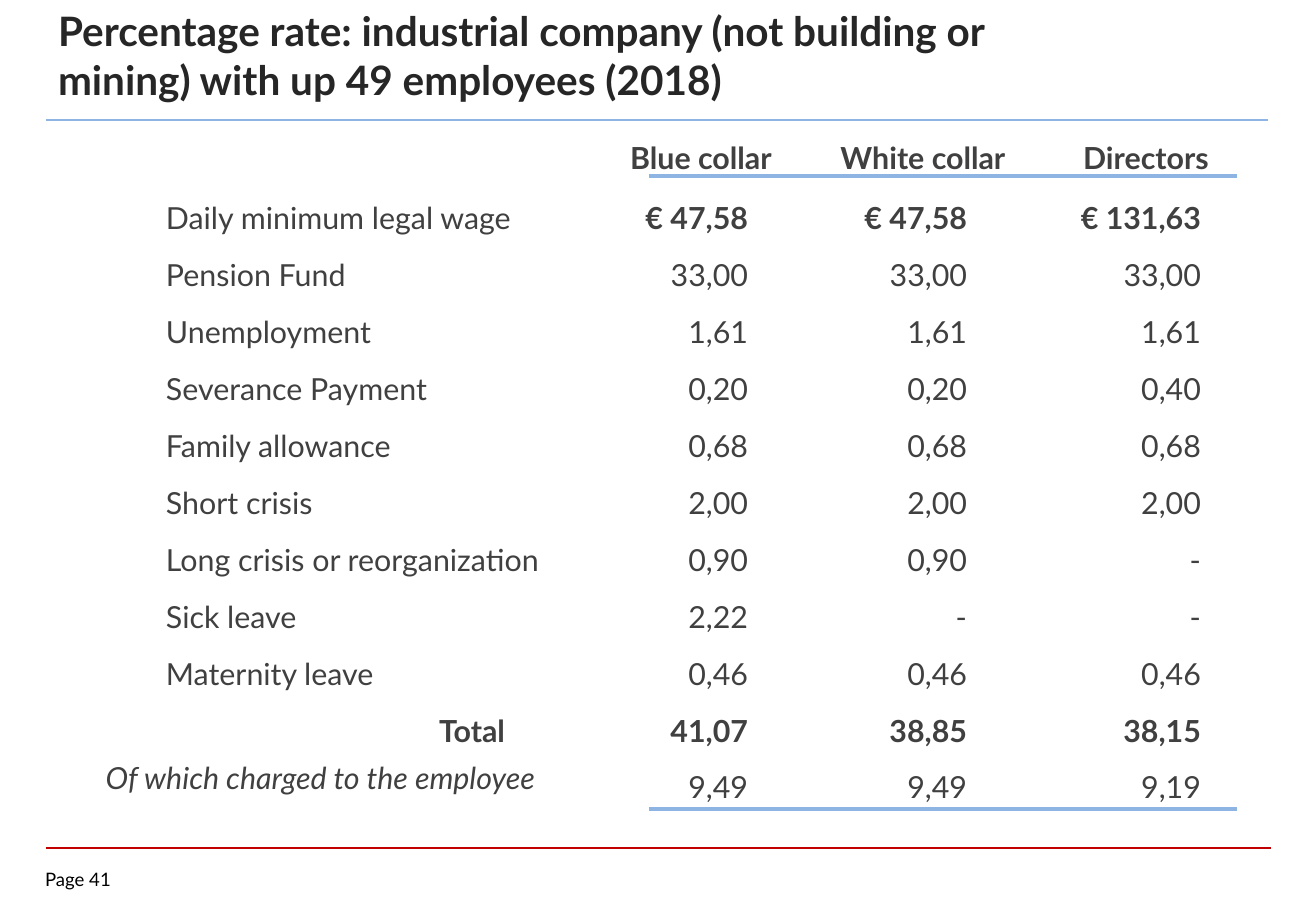
from lxml.etree import SubElement
from pptx import Presentation
from pptx.dml.color import RGBColor
from pptx.enum.shapes import MSO_CONNECTOR
from pptx.enum.text import MSO_ANCHOR, MSO_AUTO_SIZE, PP_ALIGN
from pptx.oxml.ns import qn
from pptx.util import Pt

EMU_PER_PX = 7526
FONT = "Lato"
COLORS = {"title": "262626", "text": "404040", "page": "000000",
          "rule": "8EB4E3", "footer_rule": "C00000"}

HEADINGS = ["", "Blue collar", "White collar", "Directors"]
RATES = [
    ["Daily minimum legal wage", "€ 47,58", "€ 47,58", "€ 131,63"],
    ["Pension Fund", "33,00", "33,00", "33,00"],
    ["Unemployment", "1,61", "1,61", "1,61"],
    ["Severance Payment", "0,20", "0,20", "0,40"],
    ["Family allowance", "0,68", "0,68", "0,68"],
    ["Short crisis", "2,00", "2,00", "2,00"],
    ["Long crisis or reorganization", "0,90", "0,90", "-"],
    ["Sick leave", "2,22", "-", "-"],
    ["Maternity leave", "0,46", "0,46", "0,46"],
    ["Total", "41,07", "38,85", "38,15"],
    ["Of which charged to the employee", "9,49", "9,49", "9,19"],
]
COLUMN_WIDTHS = [505, 192, 252, 194]
VALUE_INSETS = [0, 49, 82, 42]
LABEL_INDENT = 66
SUMMARY_INSETS = {"Total": 100, "Of which charged to the employee": 70}
HEADING_HEIGHT = 63
RATE_HEIGHT = 57


def px(length):
    return length * EMU_PER_PX


def add_text(paragraph, text, size, color, bold=False, italic=False):
    run = paragraph.add_run()
    run.text = text
    run.font.name = FONT
    run.font.size = Pt(size)
    run.font.bold = bold
    run.font.italic = italic
    run.font.color.rgb = RGBColor.from_string(COLORS[color])


def add_rule(slide, left, top, width, color, weight):
    rule = slide.shapes.add_connector(
        MSO_CONNECTOR.STRAIGHT, px(left), px(top), px(left + width), px(top))
    rule.line.color.rgb = RGBColor.from_string(COLORS[color])
    rule.line.width = Pt(weight)
    SubElement(rule._element.spPr, qn("a:effectLst"))


def set_margins(area, left=0, top=0, right=0, bottom=0):
    area.margin_left, area.margin_top = px(left), px(top)
    area.margin_right, area.margin_bottom = px(right), px(bottom)


def add_heading(slide, left, top, width, height):
    title = slide.shapes.title
    title.left, title.top = px(left), px(top)
    title.width, title.height = px(width), px(height)
    frame = title.text_frame
    frame.word_wrap = True
    frame.auto_size = MSO_AUTO_SIZE.NONE
    frame.vertical_anchor = MSO_ANCHOR.TOP
    set_margins(frame, left=12, right=12)
    paragraph = frame.paragraphs[0]
    paragraph.alignment = PP_ALIGN.LEFT
    paragraph.line_spacing = 1.0
    add_text(paragraph, "Percentage rate: industrial company (not building or "
             "mining) with up 49 employees (2018)", 24, "title", bold=True)
    add_rule(slide, left, top + 114, 1222, "rule", 1.5)


def fill_cell(cell, text, is_heading, column, label):
    cell.fill.background()
    cell.vertical_anchor = MSO_ANCHOR.MIDDLE
    set_margins(cell)
    is_label = column == 0
    is_charge = is_label and label.startswith("Of which")
    paragraph = cell.text_frame.paragraphs[0]
    if is_heading:
        paragraph.alignment = PP_ALIGN.CENTER
    elif is_label and label not in SUMMARY_INSETS:
        paragraph.alignment = PP_ALIGN.LEFT
        set_margins(cell, left=LABEL_INDENT)
    else:
        paragraph.alignment = PP_ALIGN.RIGHT
        inset = SUMMARY_INSETS[label] if is_label else VALUE_INSETS[column]
        set_margins(cell, right=inset, bottom=18 if is_charge else 0)
    bold = is_heading or label == "Total" or text.startswith("€")
    if text:
        add_text(paragraph, text, 18, "text", bold, is_charge)


def add_rates(slide, left, top, width, height):
    rows = [HEADINGS] + RATES
    rates = slide.shapes.add_table(
        len(rows), len(HEADINGS), px(left), px(top), px(width), px(height)).table
    rates.horz_banding = False
    for column, column_width in zip(rates.columns, COLUMN_WIDTHS):
        column.width = px(column_width)
    for row_index, entries in enumerate(rows):
        is_heading = row_index == 0
        rates.rows[row_index].height = px(HEADING_HEIGHT if is_heading else RATE_HEIGHT)
        for column_index, entry in enumerate(entries):
            fill_cell(rates.cell(row_index, column_index), entry,
                      is_heading, column_index, entries[0])
    for rule_top in (top + 50, top + height - 7):
        add_rule(slide, left + 549, rule_top, 588, "rule", 2.25)


def add_footer(slide, left, top, width, height):
    add_rule(slide, left, top, width, "footer_rule", 1)
    page = slide.shapes.add_textbox(px(left - 1), px(top + 20), px(89), px(height - 20))
    frame = page.text_frame
    frame.word_wrap = True
    set_margins(frame)
    add_text(frame.paragraphs[0], "Page 41", 11, "page")


def main():
    deck = Presentation()
    deck.slide_width, deck.slide_height = px(1316), px(911)
    slide = deck.slides.add_slide(deck.slide_layouts[5])
    add_heading(slide, 46, 6, 957, 86)
    add_rates(slide, 100, 126, sum(COLUMN_WIDTHS),
              HEADING_HEIGHT + RATE_HEIGHT * len(RATES))
    add_footer(slide, 46, 848, 1225, 47)
    deck.save("out.pptx")


if __name__ == "__main__":
    main()
